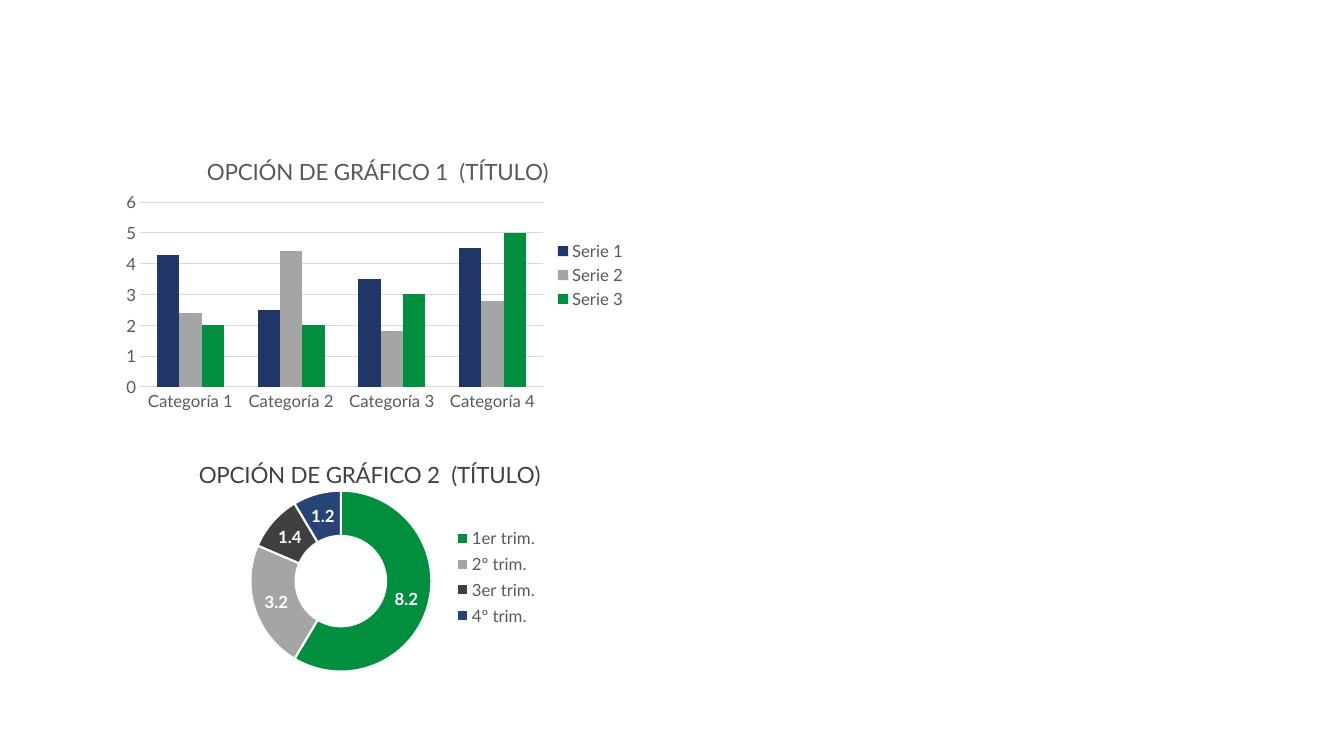
from lxml.etree import SubElement
from pptx import Presentation
from pptx.chart.data import CategoryChartData
from pptx.dml.color import RGBColor
from pptx.enum.chart import XL_CHART_TYPE, XL_LEGEND_POSITION, XL_TICK_MARK
from pptx.oxml import parse_xml
from pptx.oxml.ns import nsdecls, qn
from pptx.util import Emu, Pt

PX = 914400 / 100.8
FONT = "Lato"
NAVY = RGBColor(0x1F, 0x36, 0x66)
BLUE = RGBColor(0x26, 0x44, 0x78)
SILVER = RGBColor(0xA5, 0xA5, 0xA5)
GREEN = RGBColor(0x00, 0x8E, 0x3F)
CHARCOAL = RGBColor(0x40, 0x40, 0x40)
GREY = RGBColor(0x59, 0x59, 0x59)
RULE = RGBColor(0xD9, 0xD9, 0xD9)
WHITE = RGBColor(0xFF, 0xFF, 0xFF)


def place(element, x, y, w=None, h=None, inner=False):
    for old in element.findall(qn("c:layout")):
        element.remove(old)
    layout = parse_xml(f"<c:layout {nsdecls('c')}><c:manualLayout/></c:layout>")
    if inner:
        SubElement(layout[0], qn("c:layoutTarget")).set("val", "inner")
    for tag in ("xMode", "yMode"):
        SubElement(layout[0], qn(f"c:{tag}")).set("val", "edge")
    for tag, value in (("x", x), ("y", y), ("w", w), ("h", h)):
        if value is not None:
            SubElement(layout[0], qn(f"c:{tag}")).set("val", str(value))
    before = element.find(qn("c:tx"))
    if before is None:
        before = element.find(qn("c:legendPos"))
    if before is None:
        element.insert(0, layout)
    else:
        before.addnext(layout)


def add_titled_chart(page, kind, bounds, data, title, title_color, title_at, plot_at):
    frame = page.shapes.add_chart(kind, *[Emu(round(n * PX)) for n in bounds], data)
    chart = frame.chart
    chart.font.name = FONT
    chart.font.size = Pt(12)
    chart.font.color.rgb = GREY
    chart.has_title = True
    para = chart.chart_title.text_frame.paragraphs[0]
    para.text = title
    para.font.name = FONT
    para.font.size = Pt(16)
    para.font.bold = False
    para.font.color.rgb = title_color
    chart.chart_title.include_in_layout = False
    chart.has_legend = True
    chart.legend.position = XL_LEGEND_POSITION.RIGHT
    chart.legend.include_in_layout = False
    chart.legend.font.name = FONT
    chart.legend.font.size = Pt(12)
    chart.legend.font.color.rgb = GREY
    place(chart.chart_title._element, *title_at)
    place(chart._chartSpace.chart.plotArea, *plot_at, inner=True)
    return chart


deck = Presentation()
deck.slide_width = Emu(round(1344 * PX))
deck.slide_height = Emu(round(756 * PX))
page = deck.slides.add_slide(deck.slide_layouts[6])

column_data = CategoryChartData()
column_data.categories = [f"Categoría {n}" for n in range(1, 5)]
column_data.add_series("Serie 1", (4.3, 2.5, 3.5, 4.5))
column_data.add_series("Serie 2", (2.4, 4.4, 1.8, 2.8))
column_data.add_series("Serie 3", (2, 2, 3, 5))
columns = add_titled_chart(
    page, XL_CHART_TYPE.COLUMN_CLUSTERED, (114, 135, 523, 280), column_data,
    "OPCIÓN DE GRÁFICO 1  (TÍTULO)", GREY, (0.17, 0.06), (0.05, 0.24, 0.77, 0.66))
columns.plots[0].gap_width = 150
columns.plots[0].overlap = 0
columns.plots[0].vary_by_categories = False
for series, color in zip(columns.plots[0].series, (NAVY, SILVER, GREEN)):
    series.format.fill.solid()
    series.format.fill.fore_color.rgb = color
for axis in (columns.category_axis, columns.value_axis):
    axis.major_tick_mark = XL_TICK_MARK.NONE
    axis.minor_tick_mark = XL_TICK_MARK.NONE
    axis.tick_labels.font.name = FONT
    axis.tick_labels.font.size = Pt(12)
    axis.tick_labels.font.color.rgb = GREY
columns.value_axis.minimum_scale = 0
columns.value_axis.maximum_scale = 6
columns.value_axis.major_unit = 1
columns.value_axis.format.line.fill.background()
for line in (columns.category_axis.format.line, columns.value_axis.major_gridlines.format.line):
    line.color.rgb = RULE
    line.width = Pt(0.75)

ring_data = CategoryChartData()
ring_data.categories = ["1er trim.", "2º trim.", "3er trim.", "4º trim."]
ring_data.add_series("Series 1", (8.2, 3.2, 1.4, 1.2))
ring = add_titled_chart(
    page, XL_CHART_TYPE.DOUGHNUT, (102, 430, 464, 280), ring_data,
    "OPCIÓN DE GRÁFICO 2  (TÍTULO)", CHARCOAL, (0.2, 0.09), (0.32, 0.21, 0.39, 0.66))
place(ring.legend._element, 0.75, 0.33, 0.2, 0.39)
plot = ring.plots[0]
plot._element.find(qn("c:holeSize")).set("val", "58")
for index, color in enumerate((GREEN, SILVER, CHARCOAL, BLUE)):
    slice_format = plot.series[0].points[index].format
    slice_format.fill.solid()
    slice_format.fill.fore_color.rgb = color
    slice_format.line.color.rgb = WHITE
    slice_format.line.width = Pt(1.5)
labels = plot.series[0].data_labels
labels.show_value = True
labels.show_percentage = False
labels.font.name = FONT
labels.font.size = Pt(12)
labels.font.bold = True
labels.font.color.rgb = WHITE

deck.save("out.pptx")
